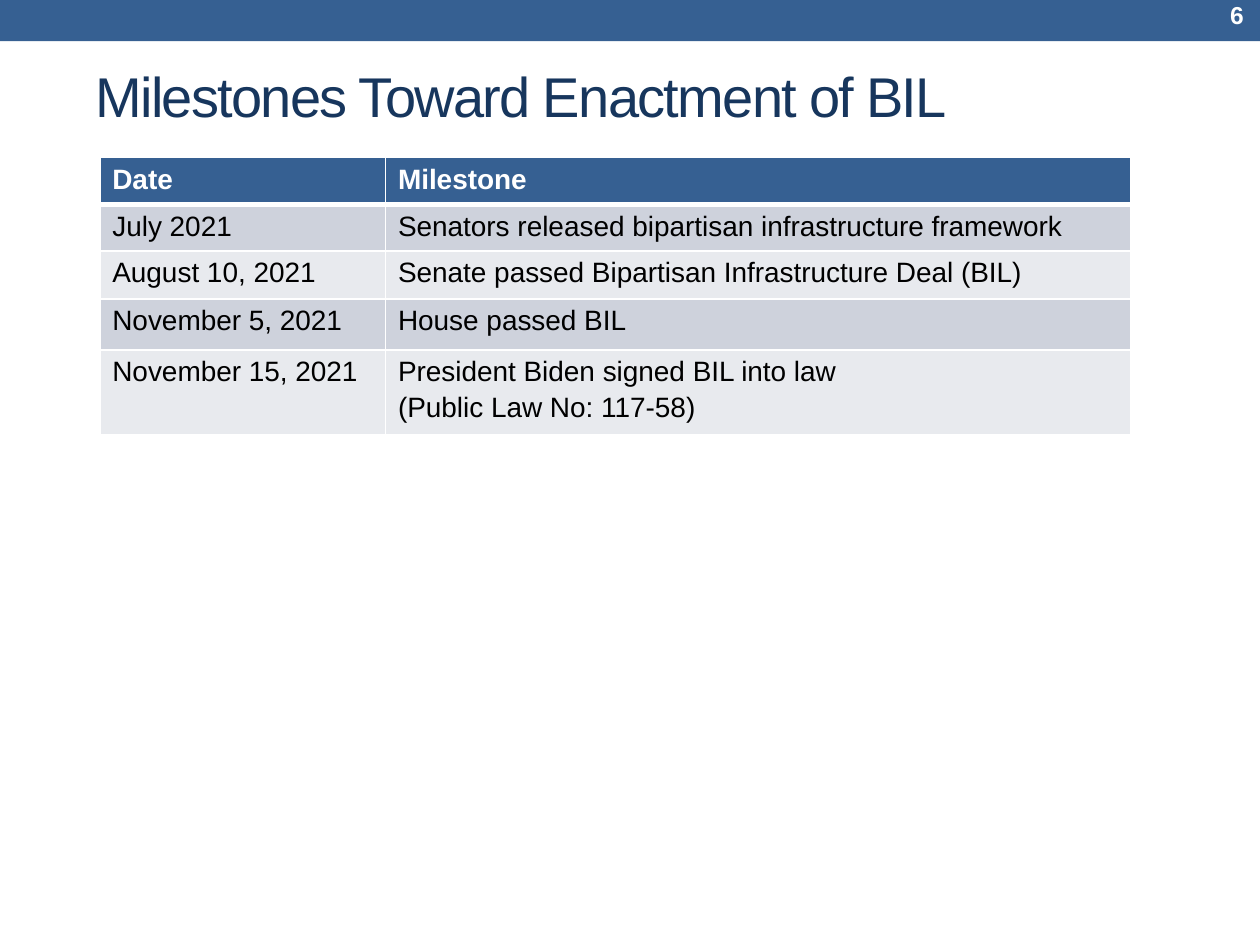
"""Build the slide listing the milestones toward enactment of BIL."""
import dataclasses
import typing

import lxml.etree
import pptx
import pptx.dml.color
import pptx.enum.shapes
import pptx.enum.text
import pptx.oxml.ns
import pptx.util

Pt = pptx.util.Pt
ALIGN = pptx.enum.text.PP_ALIGN
ANCHOR = pptx.enum.text.MSO_ANCHOR


@dataclasses.dataclass(frozen=True)
class Theme:
    font: str = "Arial"
    blue: str = "366092"
    navy: str = "17365D"
    white: str = "FFFFFF"
    black: str = "000000"
    bands: tuple[str, str] = ("CED2DC", "E8EAEE")
    title_size: float = 32
    table_size: float = 16
    number_size: float = 14


@dataclasses.dataclass(frozen=True)
class Box:
    left: float
    top: float
    width: float
    height: float

    def lengths(self) -> list[int]:
        return [Pt(value) for value in dataclasses.astuple(self)]


@dataclasses.dataclass(frozen=True)
class TextStyle:
    size: float
    color: str
    bold: bool = False
    align: typing.Any = ALIGN.LEFT
    space_after: float = 0
    tracking: float = 0


@dataclasses.dataclass(frozen=True)
class Milestone:
    date: str
    event: str
    height: float


THEME = Theme()
BAND = Box(0, -5, 720, 28.5)
TITLE = Box(47.5, 19.5, 636.5, 70)
NUMBER = Box(633.6, -4.5, 84.2, 26)
TABLE = Box(57, 90, 589, 149)
COLUMN_WIDTHS = (163.25, 425.75)
MILESTONES = (
    Milestone("Date", "Milestone", 27),
    Milestone("July 2021", "Senators released bipartisan infrastructure framework", 26.5),
    Milestone("August 10, 2021", "Senate passed Bipartisan Infrastructure Deal (BIL)", 27.5),
    Milestone("November 5, 2021", "House passed BIL", 29),
    Milestone("November 15, 2021", "President Biden signed BIL into law\n(Public Law No: 117-58)", 39),
)


def rgb(color: str) -> pptx.dml.color.RGBColor:
    return pptx.dml.color.RGBColor.from_string(color)


def apply_format(target: typing.Any, values: dict[str, typing.Any]) -> None:
    for name, value in values.items():
        setattr(target, name, value)


def write_text(frame: typing.Any, text: str, style: TextStyle) -> None:
    for index, line in enumerate(text.split("\n")):
        paragraph = frame.add_paragraph() if index else frame.paragraphs[0]
        apply_format(paragraph, {"alignment": style.align, "space_after": Pt(style.space_after)})
        run = paragraph.add_run()
        run.text = line
        apply_format(run.font, {"name": THEME.font, "size": Pt(style.size), "bold": style.bold})
        run.font.color.rgb = rgb(style.color)
        if style.tracking:
            run._r.get_or_add_rPr().set("spc", str(round(style.tracking * 100)))


def add_label(slide: typing.Any, box: Box, text: str, style: TextStyle) -> None:
    frame = slide.shapes.add_textbox(*box.lengths()).text_frame
    apply_format(frame, {"word_wrap": True, "vertical_anchor": ANCHOR.MIDDLE})
    write_text(frame, text, style)


def add_band(slide: typing.Any, box: Box, color: str) -> None:
    band = slide.shapes.add_shape(pptx.enum.shapes.MSO_SHAPE.RECTANGLE, *box.lengths())
    band.shadow.inherit = False
    band.fill.solid()
    band.fill.fore_color.rgb = rgb(color)
    band.line.fill.background()


def add_borders(cell: typing.Any, widths: dict[str, float]) -> None:
    qn = pptx.oxml.ns.qn
    properties = cell._tc.get_or_add_tcPr()
    for side, width in widths.items():
        line = lxml.etree.SubElement(properties, qn(f"a:ln{side}"), w=str(Pt(width)))
        fill = lxml.etree.SubElement(line, qn("a:solidFill"))
        lxml.etree.SubElement(fill, qn("a:srgbClr"), val=THEME.white)


def add_milestone_table(slide: typing.Any, box: Box, milestones: tuple[Milestone, ...]) -> None:
    table = slide.shapes.add_table(len(milestones), len(COLUMN_WIDTHS), *box.lengths()).table
    for column, width in zip(table.columns, COLUMN_WIDTHS):
        column.width = Pt(width)
    header = TextStyle(THEME.table_size, THEME.white, bold=True)
    body = TextStyle(THEME.table_size, THEME.black, space_after=3)
    for index, milestone in enumerate(milestones):
        table.rows[index].height = Pt(milestone.height)
        color = THEME.bands[(index - 1) % 2] if index else THEME.blue
        widths = {"L": 1, "R": 1, "T": 3 if index == 1 else 1, "B": 1 if index else 3}
        for cell, text in zip(table.rows[index].cells, (milestone.date, milestone.event)):
            add_borders(cell, widths)
            cell.fill.solid()
            cell.fill.fore_color.rgb = rgb(color)
            write_text(cell.text_frame, text, body if index else header)


def main() -> None:
    presentation = pptx.Presentation()
    apply_format(presentation, {"slide_width": Pt(720), "slide_height": Pt(540)})
    slide = presentation.slides.add_slide(presentation.slide_layouts[6])
    add_band(slide, BAND, THEME.blue)
    add_label(slide, TITLE, "Milestones Toward Enactment of BIL",
              TextStyle(THEME.title_size, THEME.navy, tracking=-1))
    add_milestone_table(slide, TABLE, MILESTONES)
    add_label(slide, NUMBER, "6",
              TextStyle(THEME.number_size, THEME.white, bold=True, align=ALIGN.RIGHT))
    presentation.save("out.pptx")


if __name__ == "__main__":
    main()
